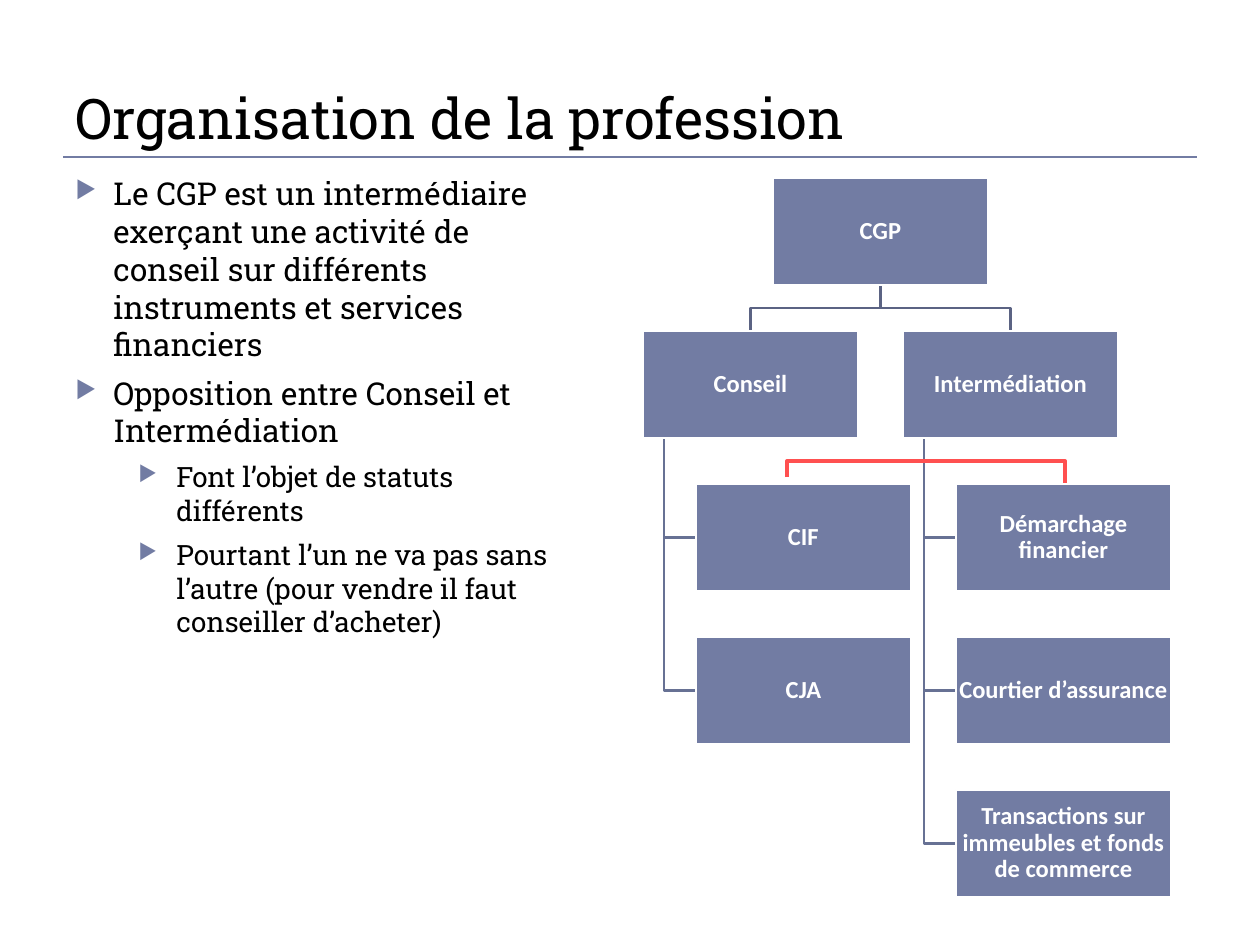
import pptx
import pptx.util
import pptx.dml.color
import pptx.enum.shapes
import pptx.enum.text
import pptx.oxml.ns
import lxml.etree

SCALE = 914400 / 126
BOX_WIDTH, BOX_HEIGHT = 215, 107
TOP, ROW_STEP = 178, 153
LEFT, COLUMN_STEP = 643, 260
CHILD_INDENT, TRUNK_INDENT = 53, 21
SLATE = "727CA3"
CENTER = pptx.enum.text.PP_ALIGN.CENTER
MIDDLE = pptx.enum.text.MSO_ANCHOR.MIDDLE
BOTTOM = pptx.enum.text.MSO_ANCHOR.BOTTOM

BRANCHES = [
    ("Conseil", ["CIF", "CJA"]),
    ("Intermédiation", [
        "Démarchage financier",
        "Courtier d’assurance",
        "Transactions sur immeubles et fonds de commerce",
    ]),
]
POINTS = [
    (0, "Le CGP est un intermédiaire exerçant une activité de conseil sur "
        "différents instruments et services financiers"),
    (0, "Opposition entre Conseil et Intermédiation"),
    (1, "Font l’objet de statuts différents"),
    (1, "Pourtant l’un ne va pas sans l’autre (pour vendre il faut conseiller d’acheter)"),
]
LEVELS = [{"size": 18, "margin": 38}, {"size": 16, "margin": 101}]


def px(length):
    return pptx.util.Emu(round(length * SCALE))


def color(value):
    return pptx.dml.color.RGBColor.from_string(value)


def apply(target, values):
    for name, value in values.items():
        setattr(target, name, value)


def add_child(parent, tag, **attributes):
    return lxml.etree.SubElement(parent, pptx.oxml.ns.qn(tag), attributes)


def set_line(shape, value, width):
    shape.line.color.rgb = color(value)
    shape.line.width = pptx.util.Pt(width)


def write(para, text, size, font, value, bold=False):
    span = para.add_run()
    span.text = text
    apply(span.font, {"size": pptx.util.Pt(size), "name": font, "bold": bold})
    span.font.color.rgb = color(value)


def add_text_frame(page, left, top, width, height):
    box = page.shapes.add_textbox(px(left), px(top), px(width), px(height))
    box.text_frame.word_wrap = True
    return box.text_frame


def add_title(page, text):
    frame = add_text_frame(page, 63, 21, 1134, 136)
    frame.vertical_anchor = BOTTOM
    write(frame.paragraphs[0], text, 32, "Roboto Slab", "000000")


def add_bullets(page, points):
    frame = add_text_frame(page, 63, 168, 508, 680)
    for index, (level, text) in enumerate(points):
        para = frame.add_paragraph() if index else frame.paragraphs[0]
        apply(para, {"level": level, "space_before": pptx.util.Pt(6)})
        properties = para._p.get_or_add_pPr()
        properties.set("marL", str(px(LEVELS[level]["margin"])))
        properties.set("indent", str(px(-38)))
        bullet_color = add_child(properties, "a:buClr")
        add_child(bullet_color, "a:srgbClr", val=SLATE)
        add_child(properties, "a:buSzPct", val="76000")
        add_child(properties, "a:buChar", char="▶")
        write(para, text, LEVELS[level]["size"], "Roboto Slab", "000000")


def add_box(page, text, left, top):
    box = page.shapes.add_shape(pptx.enum.shapes.MSO_SHAPE.RECTANGLE,
                                px(left), px(top), px(BOX_WIDTH), px(BOX_HEIGHT))
    box.shadow.inherit = False
    box.fill.solid()
    box.fill.fore_color.rgb = color(SLATE)
    set_line(box, "FFFFFF", 1.5)
    frame = box.text_frame
    apply(frame, {"word_wrap": True, "vertical_anchor": MIDDLE})
    apply(frame, {f"margin_{side}": px(1) for side in ("left", "top", "right", "bottom")})
    para = frame.paragraphs[0]
    apply(para, {"alignment": CENTER, "line_spacing": 0.9})
    write(para, text, 14, "Calibri", "FFFFFF", True)


def add_branch_line(page, points, value):
    start, *others = [(px(x), px(y)) for x, y in points]
    builder = page.shapes.build_freeform(*start)
    builder.add_line_segments(others, close=False)
    shape = builder.convert_to_shape()
    shape.shadow.inherit = False
    shape.fill.background()
    set_line(shape, value, 1.5)


def add_connector(page, kind, start, end, value, width):
    connector = page.shapes.add_connector(kind, *map(px, start + end))
    set_line(connector, value, width)
    add_child(connector._element.spPr, "a:effectLst")
    return connector


def add_red_bracket(page):
    bracket = add_connector(page, pptx.enum.shapes.MSO_CONNECTOR.ELBOW,
                            (929, 341), (923, 619), "FF5050", 2.25)
    properties = bracket._element.spPr
    properties.find(pptx.oxml.ns.qn("a:xfrm")).set("rot", str(270 * 60000))
    geometry = properties.find(pptx.oxml.ns.qn("a:prstGeom"))
    adjustments = geometry.find(pptx.oxml.ns.qn("a:avLst"))
    add_child(adjustments, "a:gd", name="adj1", fmla="val -267000")


def add_organisation(page):
    root_left = LEFT + COLUMN_STEP // 2
    root_middle = root_left + BOX_WIDTH / 2
    root_bottom = TOP + BOX_HEIGHT
    branch_top = TOP + ROW_STEP
    fork = (root_bottom + branch_top) / 2
    boxes = [("CGP", root_left, TOP)]
    for column, (name, children) in enumerate(BRANCHES):
        left = LEFT + column * COLUMN_STEP
        middle = left + BOX_WIDTH / 2
        boxes.append((name, left, branch_top))
        add_branch_line(page, [(root_middle, root_bottom), (root_middle, fork),
                               (middle, fork), (middle, branch_top)], "5B6383")
        trunk, child_left = left + TRUNK_INDENT, left + CHILD_INDENT
        for row, child in enumerate(children, 2):
            top = TOP + row * ROW_STEP
            center = top + BOX_HEIGHT / 2
            boxes.append((child, child_left, top))
            add_branch_line(page, [(trunk, branch_top + BOX_HEIGHT), (trunk, center),
                                   (child_left, center)], "677194")
    for box in boxes:
        add_box(page, *box)


def main():
    deck = pptx.Presentation()
    apply(deck, {"slide_width": px(1260), "slide_height": px(945)})
    page = deck.slides.add_slide(deck.slide_layouts[6])
    add_connector(page, pptx.enum.shapes.MSO_CONNECTOR.STRAIGHT,
                  (63, 157), (1197, 157), SLATE, 1)
    add_organisation(page)
    add_red_bracket(page)
    add_bullets(page, POINTS)
    add_title(page, "Organisation de la profession")
    deck.save("out.pptx")


if __name__ == "__main__":
    main()
